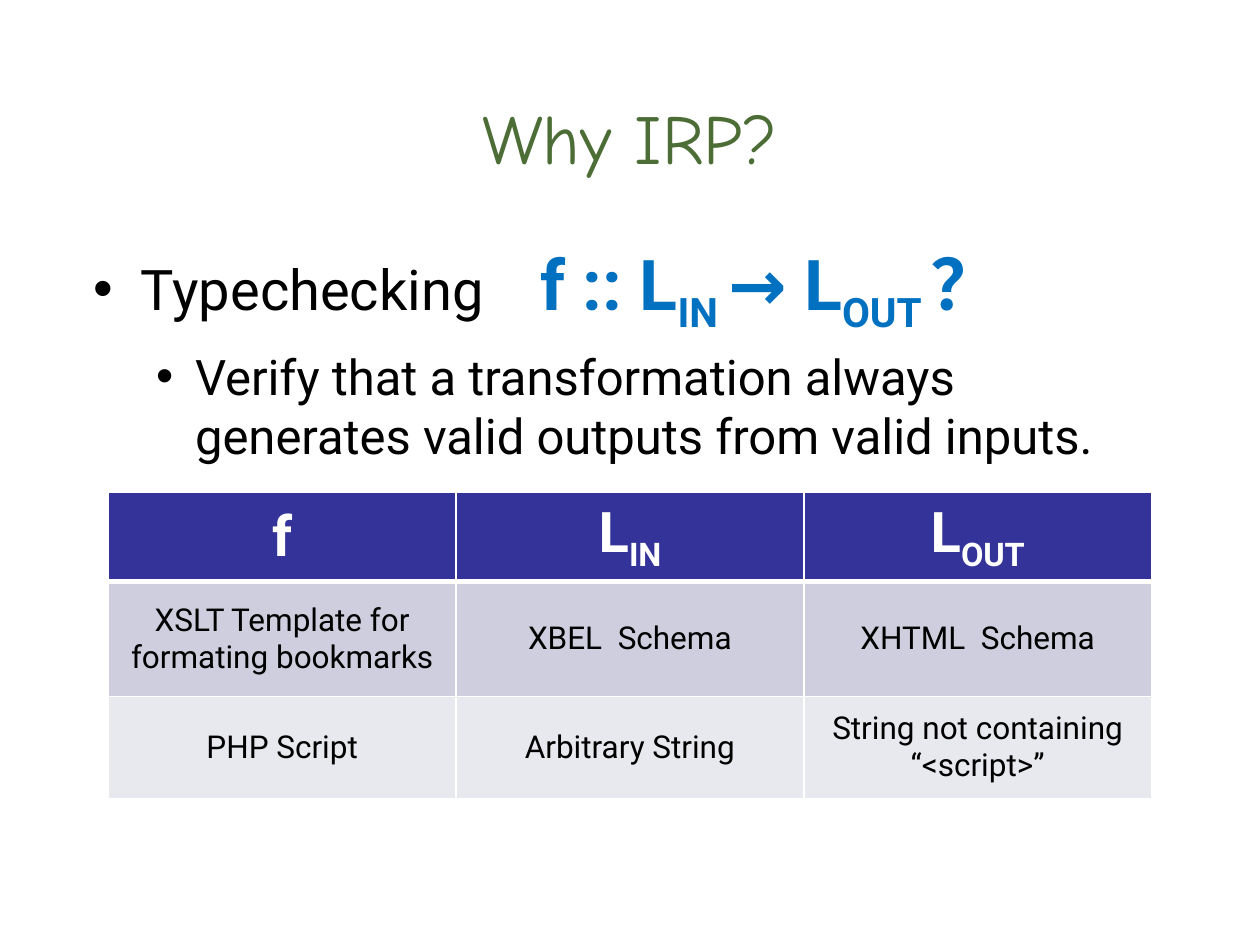
from dataclasses import dataclass
from lxml import etree
from pptx import Presentation
from pptx import util as u
from pptx.dml.color import RGBColor
from pptx.enum import text as t
from pptx.oxml import ns


@dataclass(frozen=True)
class Theme:
    green: str = "4C6D35"
    blue: str = "0070C0"
    navy: str = "333399"
    bands: tuple = ("CECEDE", "E8E8EF")
    black: str = "000000"
    white: str = "FFFFFF"
    head: str = "Comic Neue"
    body: str = "Roboto"
    big: int = 40
    mid: int = 32
    sub: int = 28
    small: int = 18


T = Theme()


def node(up, tag, **attrs):
    item = etree.SubElement(up, ns.qn(tag))
    for key, val in attrs.items():
        item.set(key, str(val))
    return item


def write(para, words, size=T.small, color=T.black, face=T.body,
          bold=False, low=False):
    run = para.add_run()
    run.text = words
    font = run.font
    font.size = u.Pt(size)
    font.name = face
    font.bold = bold
    font.color.rgb = RGBColor.from_string(color)
    if low:
        font._element.set("baseline", "-25000")


def box(slide, left, top, width, height, anchor=t.MSO_ANCHOR.TOP):
    frame = slide.shapes.add_textbox(
        *map(u.Inches, (left, top, width, height))).text_frame
    frame.word_wrap = True
    frame.vertical_anchor = anchor
    return frame


def bullet(para, left, hang, tab=None):
    props = para._p.get_or_add_pPr()
    props.set("marL", str(u.Inches(left)))
    props.set("indent", str(-u.Inches(hang)))
    node(props, "a:buFont", typeface="Arial")
    node(props, "a:buChar", char="•")
    if tab:
        stops = node(props, "a:tabLst")
        node(stops, "a:tab", pos=u.Inches(tab), algn="l")


def border(cell, base):
    props = cell._tc.get_or_add_tcPr()
    for side, width in zip("LRTB", (1, 1, 1, base)):
        line = node(props, f"a:ln{side}", w=u.Pt(width))
        node(node(line, "a:solidFill"), "a:srgbClr", val=T.white)


def fill(cell, parts, back, base=1, **style):
    border(cell, base)
    cell.fill.solid()
    cell.fill.fore_color.rgb = RGBColor.from_string(back)
    cell.vertical_anchor = t.MSO_ANCHOR.MIDDLE
    para = cell.text_frame.paragraphs[0]
    para.alignment = t.PP_ALIGN.CENTER
    for i, words in enumerate(parts):
        write(para, words, low=i == 1, **style)


def title(slide):
    para = box(slide, 0.64, 0.54, 8.72, 1.09,
               t.MSO_ANCHOR.MIDDLE).paragraphs[0]
    para.alignment = t.PP_ALIGN.CENTER
    write(para, "Why IRP?", size=T.big, color=T.green, face=T.head)


def points(slide):
    frame = box(slide, 0.64, 1.86, 8.72, 4.84)
    para = frame.paragraphs[0]
    bullet(para, 0.38, 0.38, tab=3.55)
    write(para, "Typechecking\t", size=T.mid)
    for i, words in enumerate(("f :: L", "IN ", "→ L", "OUT ", "？")):
        write(para, words, size=T.big, color=T.blue, bold=True,
              low=i % 2 == 1)
    para = frame.add_paragraph()
    bullet(para, 0.81, 0.31)
    para.level = 1
    para.space_before = u.Pt(6)
    write(para, "Verify that a transformation always generates valid "
          "outputs from valid inputs.", size=T.sub)


def grid(slide):
    heads = (("f",), ("L", "IN"), ("L", "OUT"))
    rows = (
        ("XSLT Template for formating bookmarks", "XBEL  Schema",
         "XHTML  Schema"),
        ("PHP Script", "Arbitrary String", "String not containing “<script>”"),
    )
    highs = (0.58, 0.91, 0.81)
    table = slide.shapes.add_table(
        len(highs), len(heads), u.Inches(0.86), u.Inches(3.91),
        u.Inches(8.28), u.Inches(sum(highs))).table
    for row, high in zip(table.rows, highs):
        row.height = u.Inches(high)
    for col, parts in enumerate(heads):
        fill(table.cell(0, col), parts, T.navy, base=3,
             size=T.mid, color=T.white, bold=True)
    for row, (texts, band) in enumerate(zip(rows, T.bands), 1):
        for col, words in enumerate(texts):
            fill(table.cell(row, col), (words,), band)


def main():
    deck = Presentation()
    deck.slide_width = u.Inches(10)
    deck.slide_height = u.Inches(7.5)
    slide = deck.slides.add_slide(deck.slide_layouts[6])
    title(slide)
    points(slide)
    grid(slide)
    deck.save("out.pptx")


if __name__ == "__main__":
    main()
